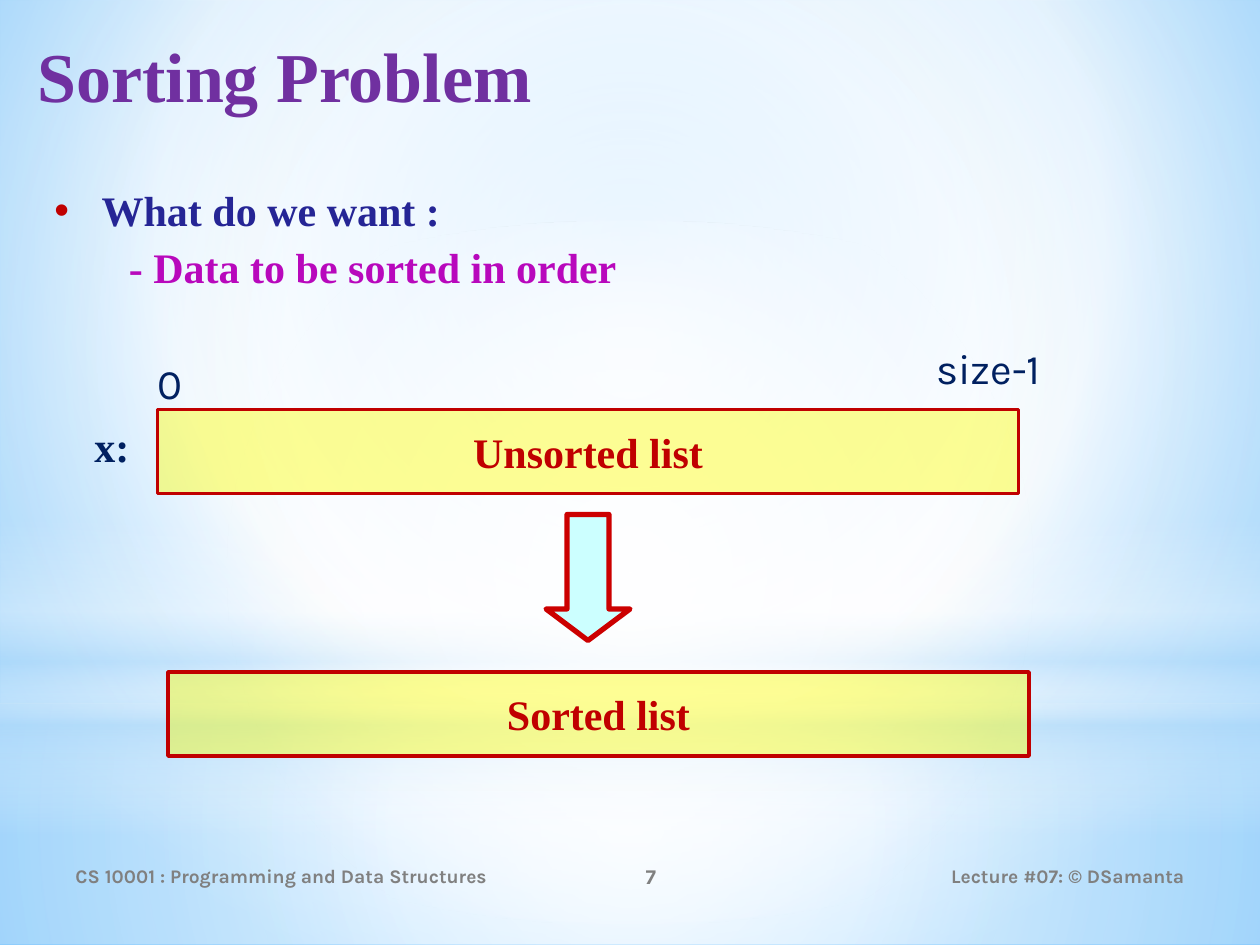
from pptx import Presentation, util as u
from pptx.dml.color import RGBColor
from pptx.enum import shapes, text
from pptx.oxml.ns import qn
from lxml import etree

COLUMNS, ROWS = 120, 90
SERIF, SANS = "Times New Roman", "Karla"
WHITE = RGBColor(0xFF, 0xFF, 0xFF)
PALE_BLUE = RGBColor(0xB4, 0xDC, 0xFA)
SKY = RGBColor(0x9E, 0xD5, 0xFF)
DEEP_SKY = RGBColor(0x5B, 0xB9, 0xFF)
PURPLE = RGBColor(0x70, 0x30, 0xA0)
INDIGO = RGBColor(0x25, 0x25, 0x95)
MAGENTA = RGBColor(0xB8, 0x08, 0xBC)
NAVY = RGBColor(0x00, 0x20, 0x60)
GRAY = RGBColor(0x80, 0x80, 0x80)
DARK_RED = RGBColor(0xC0, 0x00, 0x00)
ARROW_RED = RGBColor(0xCC, 0x00, 0x00)
YELLOW = RGBColor(0xFF, 0xFF, 0x00)
AQUA = RGBColor(0xCC, 0xFF, 0xFF)
LEFT, CENTER, RIGHT = text.PP_ALIGN.LEFT, text.PP_ALIGN.CENTER, text.PP_ALIGN.RIGHT
TOP, MIDDLE = text.MSO_ANCHOR.TOP, text.MSO_ANCHOR.MIDDLE
RECTANGLE, OVAL = shapes.MSO_SHAPE.RECTANGLE, shapes.MSO_SHAPE.OVAL

deck = Presentation()
deck.slide_width, deck.slide_height = u.Inches(10), u.Inches(7.5)
page = deck.slides.add_slide(deck.slide_layouts[6])
column, row = deck.slide_width / COLUMNS, deck.slide_height / ROWS


def area(left, top, width, height):
    return [round(size) for size in (left * column, top * row, width * column, height * row)]


def paint_gradient(owner, stops, focus):
    owner.fill.gradient() if owner is not page else page.background.fill.gradient()
    gradient = owner.element.find(".//" + qn("a:gradFill"))
    gradient.clear()
    stop_list = etree.SubElement(gradient, qn("a:gsLst"))
    for position, color, opacity in stops:
        stop = etree.SubElement(stop_list, qn("a:gs"), pos=str(position * 1000))
        tint = etree.SubElement(stop, qn("a:srgbClr"), val=str(color))
        etree.SubElement(tint, qn("a:alpha"), val=str(opacity * 1000))
    if focus:
        circle = etree.SubElement(gradient, qn("a:path"), {"path": "circle"})
        edges = {side: str(share * 1000) for side, share in zip("ltrb", focus)}
        etree.SubElement(circle, qn("a:fillToRect"), edges)
    else:
        etree.SubElement(gradient, qn("a:lin"), ang="5400000", scaled="0")


paint_gradient(page, [(0, SKY, 100), (60, WHITE, 100), (100, DEEP_SKY, 100)], (20, 10, 20, 60))

middle = (50, 50, 50, 50)
for kind, top, height, focus, stops in [
    (RECTANGLE, 67, 23, middle, [(0, WHITE, 91), (37, WHITE, 76), (100, PALE_BLUE, 79)]),
    (RECTANGLE, 0, 67, middle, [(0, WHITE, 89), (48, WHITE, 62), (100, PALE_BLUE, 79)]),
    (RECTANGLE, 49.5, 30, None, [(0, WHITE, 0), (29, WHITE, 30), (45, PALE_BLUE, 40),
                                 (55, WHITE, 26), (65, PALE_BLUE, 60), (100, WHITE, 0)]),
    (OVAL, 21, 67, middle, [(0, WHITE, 100), (56, WHITE, 0)]),
]:
    glow = page.shapes.add_shape(kind, *area(0, top, COLUMNS, height))
    glow.shadow.inherit = False
    glow.line.fill.background()
    paint_gradient(glow, stops, focus)

for words, place, size, font, color, bold, align, anchor, wrap in [
    ("Sorting Problem", (2.4, 2.5, 114.4, 13.2), 40, SERIF, PURPLE, True, LEFT, TOP, True),
    ("CS 10001 : Programming and Data Structures", (6, 81, 44, 4.8), 11, SANS, GRAY, True, LEFT, MIDDLE, True),
    ("7", (50, 81, 24, 4.8), 12, SANS, GRAY, True, CENTER, MIDDLE, True),
    ("Lecture #07: © DSamanta", (81, 81, 33, 4.8), 11, SANS, GRAY, True, RIGHT, MIDDLE, True),
    ("x:", (7.8, 39.5, 5.8, 6), 24, SERIF, NAVY, True, LEFT, TOP, False),
    ("0", (13.8, 33.5, 4.7, 6), 24, SANS, NAVY, False, LEFT, TOP, False),
    ("size-1", (88, 32, 17, 6), 24, SANS, NAVY, False, LEFT, TOP, True),
]:
    box = page.shapes.add_textbox(*area(*place))
    box.text_frame.text = words
    box.text_frame.word_wrap = wrap
    box.text_frame.vertical_anchor = anchor
    para = box.text_frame.paragraphs[0]
    para.alignment = align
    span = para.runs[0].font
    span.size, span.name, span.bold = u.Pt(size), font, bold
    span.color.rgb = color

goal = page.shapes.add_textbox(*area(4, 17, 113, 14))
goal.text_frame.text = "What do we want :\n- Data to be sorted in order"
goal.text_frame.word_wrap = True
for para, color, margin, indent in zip(goal.text_frame.paragraphs, (INDIGO, MAGENTA), (4.5, 7.1), (-4.5, 0)):
    para.space_before = u.Pt(3.5)
    span = para.runs[0].font
    span.size, span.name, span.bold = u.Pt(24), SERIF, True
    span.color.rgb = color
    layout = para._p.get_or_add_pPr()
    layout.set("marL", str(round(margin * column)))
    layout.set("indent", str(round(indent * column)))

bulleted = goal.text_frame.paragraphs[0]._p.get_or_add_pPr()
bullet_color = etree.SubElement(bulleted, qn("a:buClr"))
etree.SubElement(bullet_color, qn("a:srgbClr"), val=str(DARK_RED))
etree.SubElement(bulleted, qn("a:buFont"), typeface="Arial")
etree.SubElement(bulleted, qn("a:buChar"), char="•")

for words, left, top in [("Unsorted list", 15, 39), ("Sorted list", 16, 64)]:
    bar = page.shapes.add_shape(RECTANGLE, *area(left, top, 82, 8))
    bar.shadow.inherit = False
    bar.fill.solid()
    bar.fill.fore_color.rgb = YELLOW
    tint = bar.element.spPr.find(qn("a:solidFill")).find(qn("a:srgbClr"))
    etree.SubElement(tint, qn("a:alpha"), val="42000")
    bar.line.color.rgb = DARK_RED
    bar.line.width = u.Pt(2)
    bar.text_frame.text = words
    bar.text_frame.word_wrap = False
    bar.text_frame.vertical_anchor = MIDDLE
    para = bar.text_frame.paragraphs[0]
    para.alignment = CENTER
    span = para.runs[0].font
    span.size, span.name, span.bold = u.Pt(24), SERIF, True
    span.color.rgb = DARK_RED

arrow = page.shapes.add_shape(shapes.MSO_SHAPE.DOWN_ARROW, *area(52, 49, 8, 12))
arrow.shadow.inherit = False
arrow.adjustments[0], arrow.adjustments[1] = 0.5, 0.375
arrow.fill.solid()
arrow.fill.fore_color.rgb = AQUA
arrow.line.color.rgb = ARROW_RED
arrow.line.width = u.Pt(3)

deck.save("out.pptx")
